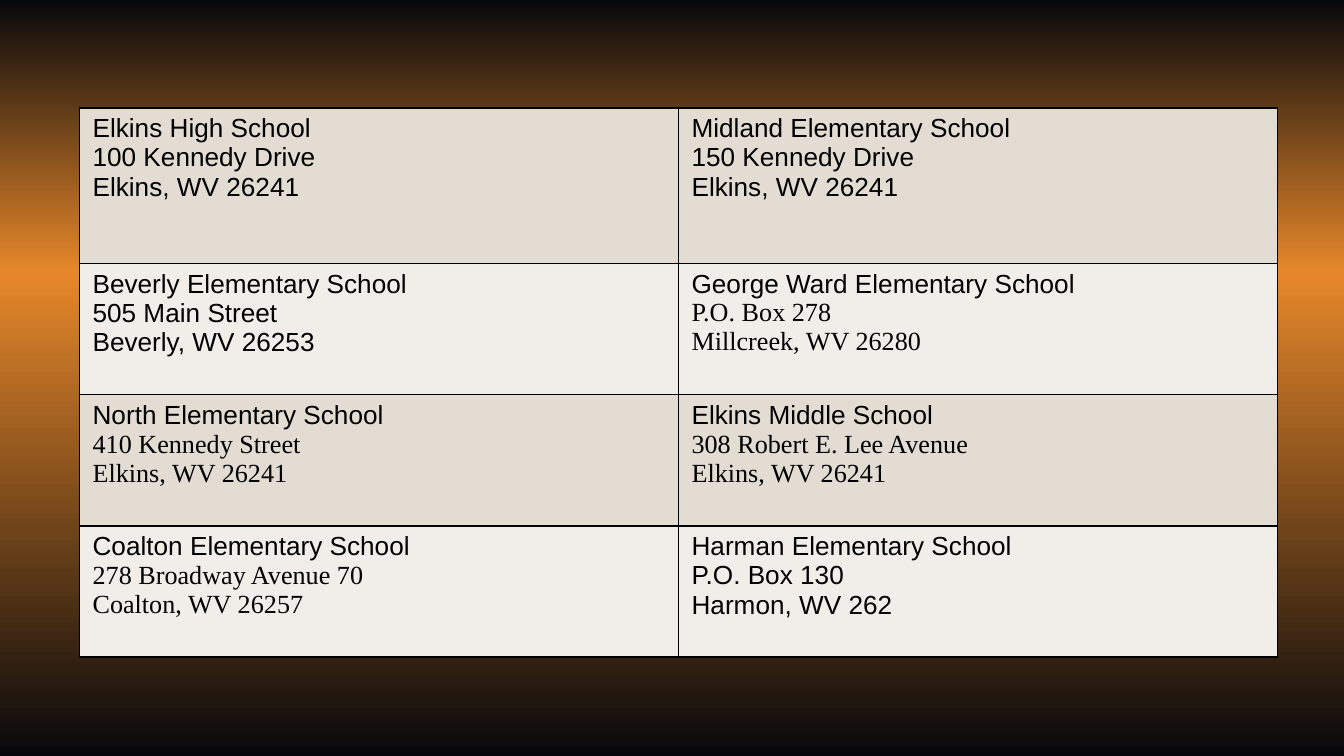
from copy import deepcopy

from lxml.etree import SubElement
from pptx import Presentation
from pptx.dml.color import RGBColor
from pptx.oxml.ns import qn
from pptx.util import Cm, Pt

NIGHT = RGBColor(0x07, 0x08, 0x0B)
ORANGE = RGBColor(0xE6, 0x88, 0x2A)
BLACK = RGBColor(0x00, 0x00, 0x00)
SAND = RGBColor(0xE2, 0xDC, 0xD3)
IVORY = RGBColor(0xF1, 0xEE, 0xEA)

SANS, SERIF = "Arial", "Times New Roman"

# Each school: name, street, town, font of the address lines
SCHOOL_ROWS = [
    [("Elkins High School", "100 Kennedy Drive", "Elkins, WV 26241", SANS),
     ("Midland Elementary School", "150 Kennedy Drive", "Elkins, WV 26241", SANS)],
    [("Beverly Elementary School", "505 Main Street", "Beverly, WV 26253", SANS),
     ("George Ward Elementary School", "P.O. Box 278", "Millcreek, WV 26280", SERIF)],
    [("North Elementary School", "410 Kennedy Street", "Elkins, WV 26241", SERIF),
     ("Elkins Middle School", "308 Robert E. Lee Avenue", "Elkins, WV 26241", SERIF)],
    [("Coalton Elementary School", "278 Broadway Avenue 70", "Coalton, WV 26257", SERIF),
     ("Harman Elementary School", "P.O. Box 130", "Harmon, WV 262", SANS)],
]
ROW_HEIGHTS = [Cm(2.94), Cm(2.48), Cm(2.48), Cm(2.48)]


def paint_background(slide):
    """Vertical glow: dark at both edges, orange above the middle."""
    glow = slide.background.fill
    glow.gradient()
    glow.gradient_angle = 270
    stop_list = slide.background._cSld.find(".//" + qn("a:gsLst"))
    stop_list.insert(1, deepcopy(stop_list[0]))
    colours = [(0, NIGHT), (0.36, ORANGE), (1, NIGHT)]
    for stop, (position, colour) in zip(glow.gradient_stops, colours):
        stop.position = position
        stop.color.rgb = colour


def draw_borders(cell):
    properties = cell._tc.get_or_add_tcPr()
    for side in ("a:lnL", "a:lnR", "a:lnT", "a:lnB"):
        line = SubElement(properties, qn(side), w=str(Pt(1)))
        fill = SubElement(line, qn("a:solidFill"))
        SubElement(fill, qn("a:srgbClr"), val=str(BLACK))


def fill_school_cell(cell, school, colour):
    *lines, address_font = school
    draw_borders(cell)
    cell.fill.solid()
    cell.fill.fore_color.rgb = colour
    cell.margin_left = cell.margin_right = Cm(0.25)
    cell.margin_top = cell.margin_bottom = Cm(0.11)
    cell.text = "\n".join(lines)
    fonts = (SANS, address_font, address_font)
    for paragraph, name in zip(cell.text_frame.paragraphs, fonts):
        paragraph.font.name = name
        paragraph.font.size = Pt(14)
        paragraph.font.bold = False
        paragraph.font.color.rgb = BLACK


def add_school_table(slide, left, top, width):
    columns = len(SCHOOL_ROWS[0])
    directory = slide.shapes.add_table(
        len(SCHOOL_ROWS), columns, left, top, width, sum(ROW_HEIGHTS)).table
    directory.first_row = False
    directory.horz_banding = False
    for column in directory.columns:
        column.width = width // columns
    for r, (schools, height) in enumerate(zip(SCHOOL_ROWS, ROW_HEIGHTS)):
        directory.rows[r].height = height
        for c, school in enumerate(schools):
            fill_school_cell(directory.cell(r, c), school, IVORY if r % 2 else SAND)


def main():
    presentation = Presentation()
    presentation.slide_width = Cm(25.4)
    presentation.slide_height = Cm(14.29)
    slide = presentation.slides.add_slide(presentation.slide_layouts[6])
    paint_background(slide)
    add_school_table(slide, Cm(1.5), Cm(2.04), Cm(22.64))
    presentation.save("out.pptx")


if __name__ == "__main__":
    main()
